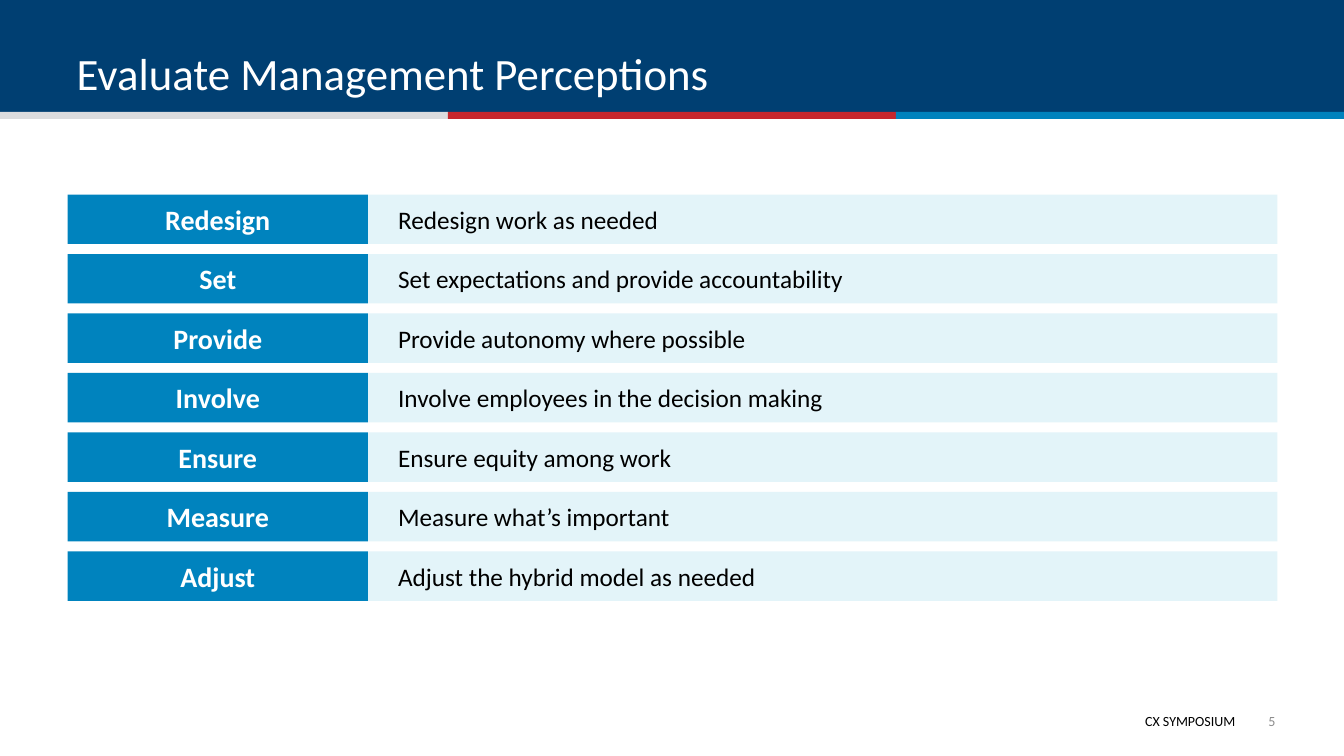
from dataclasses import dataclass

from pptx import Presentation
from pptx.dml.color import RGBColor
from pptx.enum.shapes import MSO_SHAPE
from pptx.enum.text import MSO_ANCHOR, MSO_AUTO_SIZE, PP_ALIGN
from pptx.util import Inches, Pt


@dataclass(frozen=True)
class Theme:
    font: str = "Calibri"
    navy: str = "003F72"
    gray: str = "DBDCDE"
    red: str = "C6262D"
    blue: str = "0082BD"
    label: str = "0083BE"
    pale: str = "E3F4F9"
    white: str = "FFFFFF"
    black: str = "000000"
    muted: str = "8C8C8C"
    title_size: int = 32
    label_size: int = 20
    body_size: int = 18
    footer_size: int = 10


ROWS = [
    ("Redesign", "Redesign work as needed"),
    ("Set", "Set expectations and provide accountability"),
    ("Provide", "Provide autonomy where possible"),
    ("Involve", "Involve employees in the decision making"),
    ("Ensure", "Ensure equity among work"),
    ("Measure", "Measure what’s important"),
    ("Adjust", "Adjust the hybrid model as needed"),
]


def write(tf, text, *, font, size, color, bold=False, align=PP_ALIGN.LEFT,
          anchor=MSO_ANCHOR.MIDDLE, indent=0):
    tf.word_wrap = True
    tf.auto_size = MSO_AUTO_SIZE.NONE
    tf.vertical_anchor = anchor
    p = tf.paragraphs[0]
    p.alignment = align
    if indent:
        p._p.get_or_add_pPr().set("marL", str(Inches(indent)))
    r = p.add_run()
    r.text = text
    r.font.name = font
    r.font.size = Pt(size)
    r.font.bold = bold
    r.font.color.rgb = RGBColor.from_string(color)


class SlideBuilder:
    """Draws themed elements on one slide."""

    def __init__(self, slide, theme):
        self.slide = slide
        self.theme = theme

    def rect(self, x, y, w, h, fill, text=None, **fmt):
        sp = self.slide.shapes.add_shape(
            MSO_SHAPE.RECTANGLE, Inches(x), Inches(y), Inches(w), Inches(h))
        sp.shadow.inherit = False
        sp.fill.solid()
        sp.fill.fore_color.rgb = RGBColor.from_string(fill)
        sp.line.fill.background()
        if text:
            write(sp.text_frame, text, font=self.theme.font, **fmt)

    def title(self, x, y, w, h, text):
        sp = self.slide.shapes.title
        sp.left, sp.top, sp.width, sp.height = map(Inches, (x, y, w, h))
        self.slide.shapes._spTree.append(sp._element)
        write(sp.text_frame, text, font=self.theme.font,
              size=self.theme.title_size, color=self.theme.white,
              anchor=MSO_ANCHOR.BOTTOM)

    def footer(self, x, y, w, h, text, color, inset):
        sp = self.slide.shapes.add_textbox(
            Inches(x), Inches(y), Inches(w), Inches(h))
        tf = sp.text_frame
        tf.margin_left = tf.margin_right = Inches(inset)
        tf.margin_top = tf.margin_bottom = 0
        write(tf, text, font=self.theme.font, size=self.theme.footer_size,
              color=color, align=PP_ALIGN.RIGHT)


def main():
    prs = Presentation()
    prs.slide_width, prs.slide_height = Inches(13.33), Inches(7.5)
    theme = Theme()
    s = SlideBuilder(prs.slides.add_slide(prs.slide_layouts[5]), theme)

    s.rect(0, 0, 13.33, 1.14, theme.navy)
    stripe = 13.33 / 3
    for i, color in enumerate((theme.gray, theme.red, theme.blue)):
        s.rect(i * stripe, 1.11, stripe, 0.07, color)
    s.title(0.66, 0.15, 12, 0.89, "Evaluate Management Perceptions")

    for i, (label, detail) in enumerate(ROWS):
        y = 1.93 + i * 0.59
        s.rect(0.67, y, 2.98, 0.49, theme.label, label, size=theme.label_size,
               color=theme.white, bold=True, align=PP_ALIGN.CENTER)
        s.rect(3.65, y, 9.02, 0.49, theme.pale, detail, size=theme.body_size,
               color=theme.black, indent=0.2)

    s.footer(5.51, 7.02, 6.84, 0.27, "CX SYMPOSIUM", theme.black, 0.1)
    s.footer(12.29, 6.95, 0.36, 0.4, "5", theme.muted, 0)
    prs.save("out.pptx")


if __name__ == "__main__":
    main()
